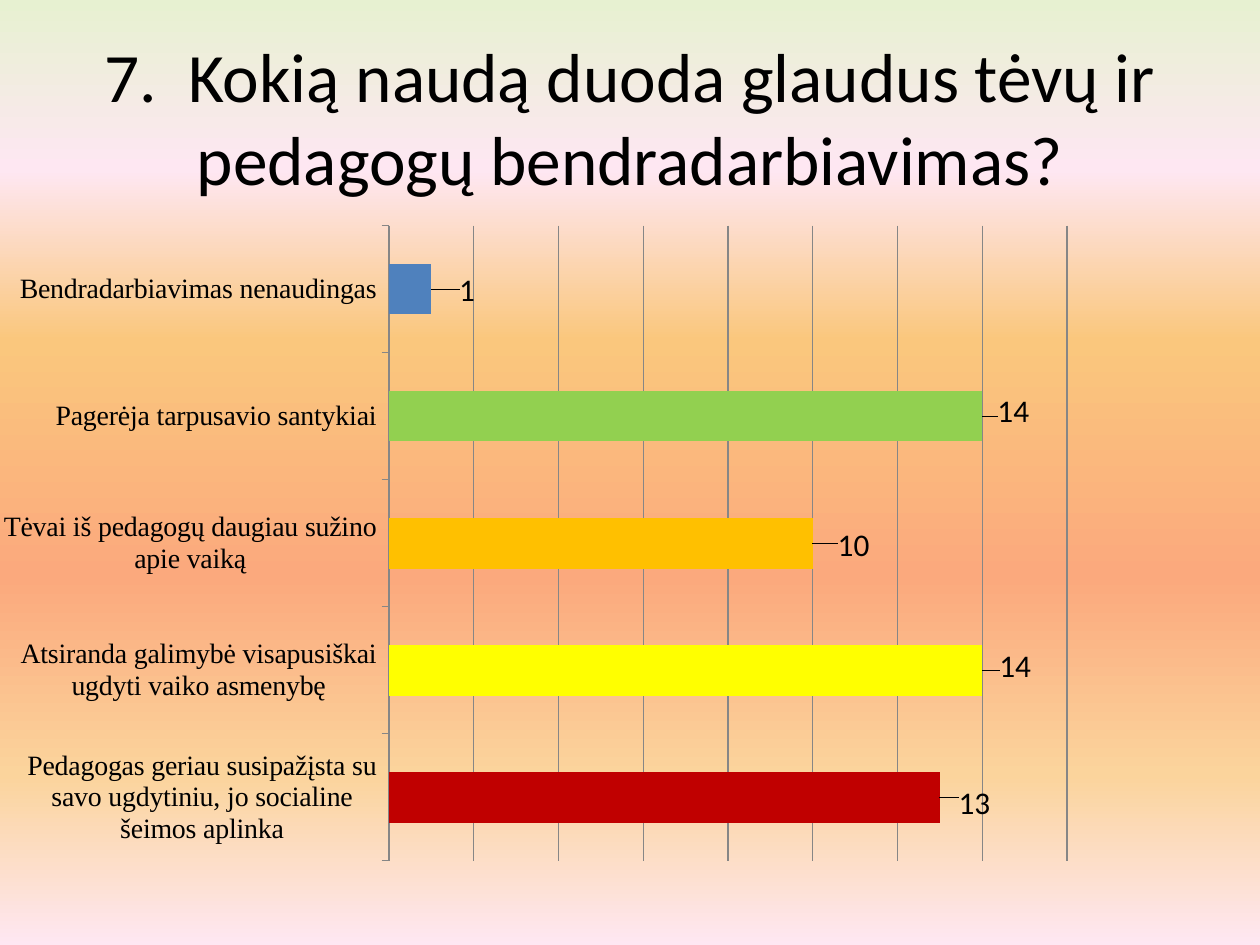
from lxml.etree import SubElement, fromstring
from pptx import Presentation
from pptx.chart.data import CategoryChartData
from pptx.dml.color import RGBColor
from pptx.enum.chart import XL_CHART_TYPE, XL_LABEL_POSITION, XL_TICK_LABEL_POSITION, XL_TICK_MARK
from pptx.enum.text import MSO_ANCHOR, PP_ALIGN
from pptx.oxml.ns import qn
from pptx.util import Pt

COLORS = {"text": "000000", "grid": "868686"}
BACKGROUND_STOPS = [
    (0, "E7F1D1"), (18, "FEE7F2"), (36, "FAC77D"),
    (61, "FBA97D"), (82, "FBD49C"), (100, "FEE7F2"),
]
TITLE = "7.  Kokią naudą duoda glaudus tėvų ir pedagogų bendradarbiavimas?"
TITLE_BOX = {"left": 36, "top": 21.6, "width": 648, "height": 90}
CHART_BOX = (2.16, 126, 720, 414)
PLOT_LAYOUT = {"x": 0.302, "y": 0.007, "w": 0.541, "h": 0.877}
# category, answers, bar colour, label shift in points
ANSWERS = [
    ("Pedagogas geriau susipažįsta su savo ugdytiniu, jo socialine šeimos aplinka", 13, "C00000", (8, 3.5)),
    ("Atsiranda galimybė visapusiškai ugdyti vaiko asmenybę", 14, "FFFF00", (7, -2.5)),
    ("Tėvai iš pedagogų daugiau sužino apie vaiką", 10, "FFC000", (11.5, 1.5)),
    ("Pagerėja tarpusavio santykiai", 14, "92D050", (6, -3)),
    ("Bendradarbiavimas nenaudingas", 1, "4F81BD", (13, 0.5)),
]
LEADER_LINES = (
    '<c:extLst xmlns:c="http://schemas.openxmlformats.org/drawingml/2006/chart">'
    '<c:ext uri="{CE6537A1-D6FC-4f65-9D91-7224C49458BB}" '
    'xmlns:c15="http://schemas.microsoft.com/office/drawing/2012/chart">'
    '<c15:showLeaderLines val="1"/></c:ext></c:extLst>'
)


def apply(target, values):
    for name, value in values.items():
        setattr(target, name, value)


def format_font(font, name, size):
    apply(font, {"name": name, "size": Pt(size), "bold": False})
    font.color.rgb = RGBColor.from_string(COLORS["text"])


def format_line(line, color):
    line.color.rgb = RGBColor.from_string(color)
    line.width = Pt(0.75)


def add_layout(parent, index, values):
    layout = parent.makeelement(qn("c:layout"))
    manual = SubElement(layout, qn("c:manualLayout"))
    for tag, value in values.items():
        SubElement(manual, qn(f"c:{tag}"), val=str(value))
    parent.insert(index, layout)


def paint_background(slide):
    fill = slide.background.fill
    fill.gradient()
    fill.gradient_angle = 270
    stops = slide.element.find(".//" + qn("a:gsLst"))
    for stop in list(stops):
        stops.remove(stop)
    for position, color in BACKGROUND_STOPS:
        stop = SubElement(stops, qn("a:gs"), pos=str(position * 1000))
        SubElement(stop, qn("a:srgbClr"), val=color)


def add_title(slide):
    title = slide.shapes.title
    apply(title, {side: Pt(length) for side, length in TITLE_BOX.items()})
    frame = title.text_frame
    frame.text = TITLE
    apply(frame, {"word_wrap": True, "vertical_anchor": MSO_ANCHOR.MIDDLE})
    paragraph = frame.paragraphs[0]
    paragraph.alignment = PP_ALIGN.CENTER
    format_font(paragraph.runs[0].font, "Calibri", 39.6)


def add_answer_chart(slide):
    data = CategoryChartData()
    data.categories = [answer[0] for answer in ANSWERS]
    data.add_series("Series 1", [answer[1] for answer in ANSWERS])
    chart = slide.shapes.add_chart(
        XL_CHART_TYPE.BAR_CLUSTERED, *map(Pt, CHART_BOX), data).chart
    apply(chart, {"has_legend": False, "has_title": False})
    format_font(chart.font, "Calibri", 18)

    category_axis, value_axis = chart.category_axis, chart.value_axis
    apply(category_axis, {"major_tick_mark": XL_TICK_MARK.OUTSIDE,
                          "tick_label_position": XL_TICK_LABEL_POSITION.NEXT_TO_AXIS,
                          "has_major_gridlines": False})
    format_font(category_axis.tick_labels.font, "Times New Roman", 16)
    apply(value_axis, {"minimum_scale": 0, "maximum_scale": 16, "major_unit": 2,
                       "has_major_gridlines": True, "visible": False})
    for line in (category_axis.format.line, value_axis.major_gridlines.format.line):
        format_line(line, COLORS["grid"])

    plot = chart.plots[0]
    apply(plot, {"gap_width": 150, "vary_by_categories": False})
    plot_area = chart.element.find(".//" + qn("c:plotArea"))
    for layout in plot_area.findall(qn("c:layout")):
        plot_area.remove(layout)
    add_layout(plot_area, 0, {"layoutTarget": "inner", "xMode": "edge", "yMode": "edge", **PLOT_LAYOUT})

    series = plot.series[0]
    labels = series.data_labels
    apply(labels, {"show_value": True, "position": XL_LABEL_POSITION.OUTSIDE_END})
    format_font(labels.font, "Calibri", 18)
    for index, (_, _, color, (right, down)) in enumerate(ANSWERS):
        point = series.points[index]
        point.format.fill.solid()
        point.format.fill.fore_color.rgb = RGBColor.from_string(color)
        point.data_label.position = XL_LABEL_POSITION.OUTSIDE_END
        label = series.points[index].data_label
        format_font(label.font, "Calibri", 18)
    label_list = chart.element.find(".//" + qn("c:ser")).find(qn("c:dLbls"))
    for label, answer in zip(label_list.findall(qn("c:dLbl")), ANSWERS):
        right, down = answer[3]
        add_layout(label, 1, {"x": round(right / CHART_BOX[2], 4), "y": round(down / CHART_BOX[3], 4)})
    label_list.append(fromstring(LEADER_LINES))


def main():
    presentation = Presentation()
    apply(presentation, {"slide_width": Pt(720), "slide_height": Pt(540)})
    slide = presentation.slides.add_slide(presentation.slide_layouts[5])
    paint_background(slide)
    add_title(slide)
    add_answer_chart(slide)
    presentation.save("out.pptx")


if __name__ == "__main__":
    main()
